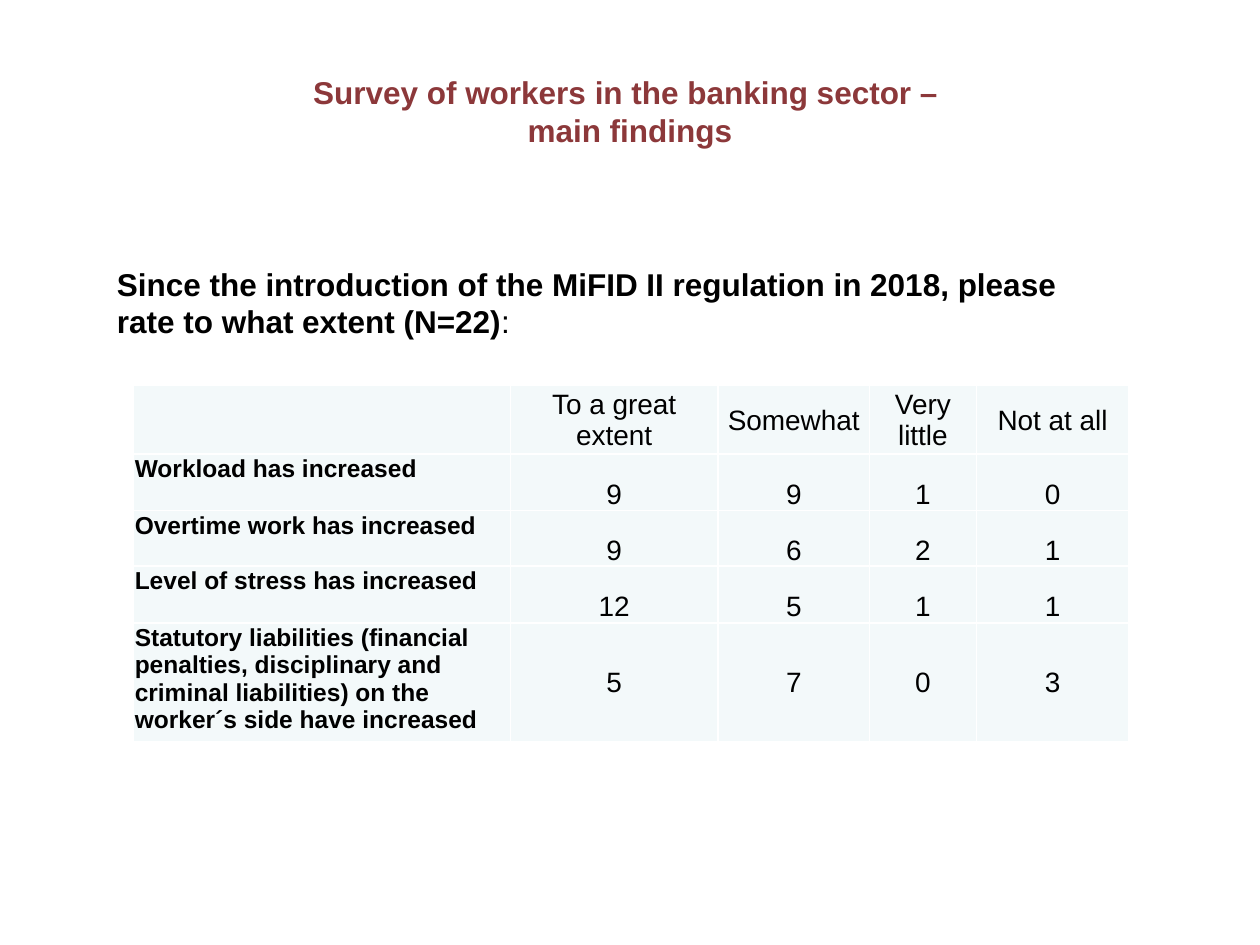
from dataclasses import dataclass

from lxml import etree
from pptx import Presentation
from pptx.dml.color import RGBColor
from pptx.enum.text import MSO_ANCHOR as Anchor, PP_ALIGN as Align
from pptx.oxml.ns import qn
from pptx.util import Inches, Pt


@dataclass(frozen=True)
class Theme:
    font: str = "Arial"
    title: str = "8C383A"
    text: str = "000000"
    cell: str = "F3F9FA"
    border: str = "FFFFFF"
    heading_size: int = 18
    value_size: int = 16
    label_size: int = 14


THEME = Theme()
COLUMN_WIDTHS = [2.99, 1.65, 1.2, 0.85, 1.21]
ROW_HEIGHTS = [0.5, 0.45, 0.44, 0.45, 0.88]
HEADERS = ["", "To a great extent", "Somewhat", "Very little", "Not at all"]
FINDINGS = [
    ("Workload has increased", 9, 9, 1, 0),
    ("Overtime work has increased", 9, 6, 2, 1),
    ("Level of stress has increased", 12, 5, 1, 1),
    ("Statutory liabilities (financial penalties, disciplinary and criminal "
     "liabilities) on the worker´s side have increased", 5, 7, 0, 3),
]


def write_text(frame, text, size, color=THEME.text, bold=False, align=Align.LEFT, plain_end=""):
    frame.word_wrap = True
    paragraph = frame.paragraphs[0]
    paragraph.text = text
    paragraph.alignment = align
    paragraph.font.size = Pt(size)
    if plain_end:
        paragraph.add_run().text = plain_end
    for run in paragraph.runs:
        run.font.name = THEME.font
        run.font.size = Pt(size)
        run.font.color.rgb = RGBColor.from_string(color)
        run.font.bold = bold and run.text != plain_end


def add_title(slide, box):
    frame = slide.shapes.add_textbox(*map(Inches, box)).text_frame
    frame.vertical_anchor = Anchor.BOTTOM
    write_text(frame, "Survey of workers in the banking sector – \vmain findings",
               THEME.heading_size, color=THEME.title, bold=True, align=Align.CENTER)


def add_question(slide, box):
    frame = slide.shapes.add_textbox(*map(Inches, box)).text_frame
    write_text(frame, "Since the introduction of the MiFID II regulation in 2018, "
               "please rate to what extent (N=22)",
               THEME.heading_size, bold=True, plain_end=":")


def style_cell(cell, anchor):
    cell.margin_left = cell.margin_right = cell.margin_top = Inches(0.01)
    cell.margin_bottom = 0
    cell.vertical_anchor = anchor
    properties = cell._tc.get_or_add_tcPr()
    for side in ("a:lnL", "a:lnR", "a:lnT", "a:lnB"):
        line = etree.SubElement(properties, qn(side), w=str(Pt(1)))
        fill = etree.SubElement(line, qn("a:solidFill"))
        etree.SubElement(fill, qn("a:srgbClr"), val=THEME.border)
    cell.fill.solid()
    cell.fill.fore_color.rgb = RGBColor.from_string(THEME.cell)


def add_findings_table(slide, box):
    rows = [HEADERS, *FINDINGS]
    table = slide.shapes.add_table(len(rows), len(HEADERS), *map(Inches, box)).table
    for column, width in zip(table.columns, COLUMN_WIDTHS):
        column.width = Inches(width)
    for row, height in zip(table.rows, ROW_HEIGHTS):
        row.height = Inches(height)
    for row_index, values in enumerate(rows):
        centered = row_index in (0, len(rows) - 1)
        value_anchor = Anchor.MIDDLE if centered else Anchor.BOTTOM
        for column_index, value in enumerate(values):
            cell = table.cell(row_index, column_index)
            is_label = column_index == 0
            style_cell(cell, Anchor.TOP if is_label else value_anchor)
            write_text(cell.text_frame, str(value),
                       THEME.label_size if is_label else THEME.value_size,
                       bold=is_label, align=Align.LEFT if is_label else Align.CENTER)


def main():
    presentation = Presentation()
    presentation.slide_width, presentation.slide_height = Inches(10), Inches(7.5)
    slide = presentation.slides.add_slide(presentation.slide_layouts[6])
    add_title(slide, (0.5, 0.36, 9, 0.87))
    add_findings_table(slide, (1.06, 3.06, sum(COLUMN_WIDTHS), sum(ROW_HEIGHTS)))
    add_question(slide, (0.83, 2.05, 7.8, 0.71))
    presentation.save("out.pptx")


if __name__ == "__main__":
    main()
